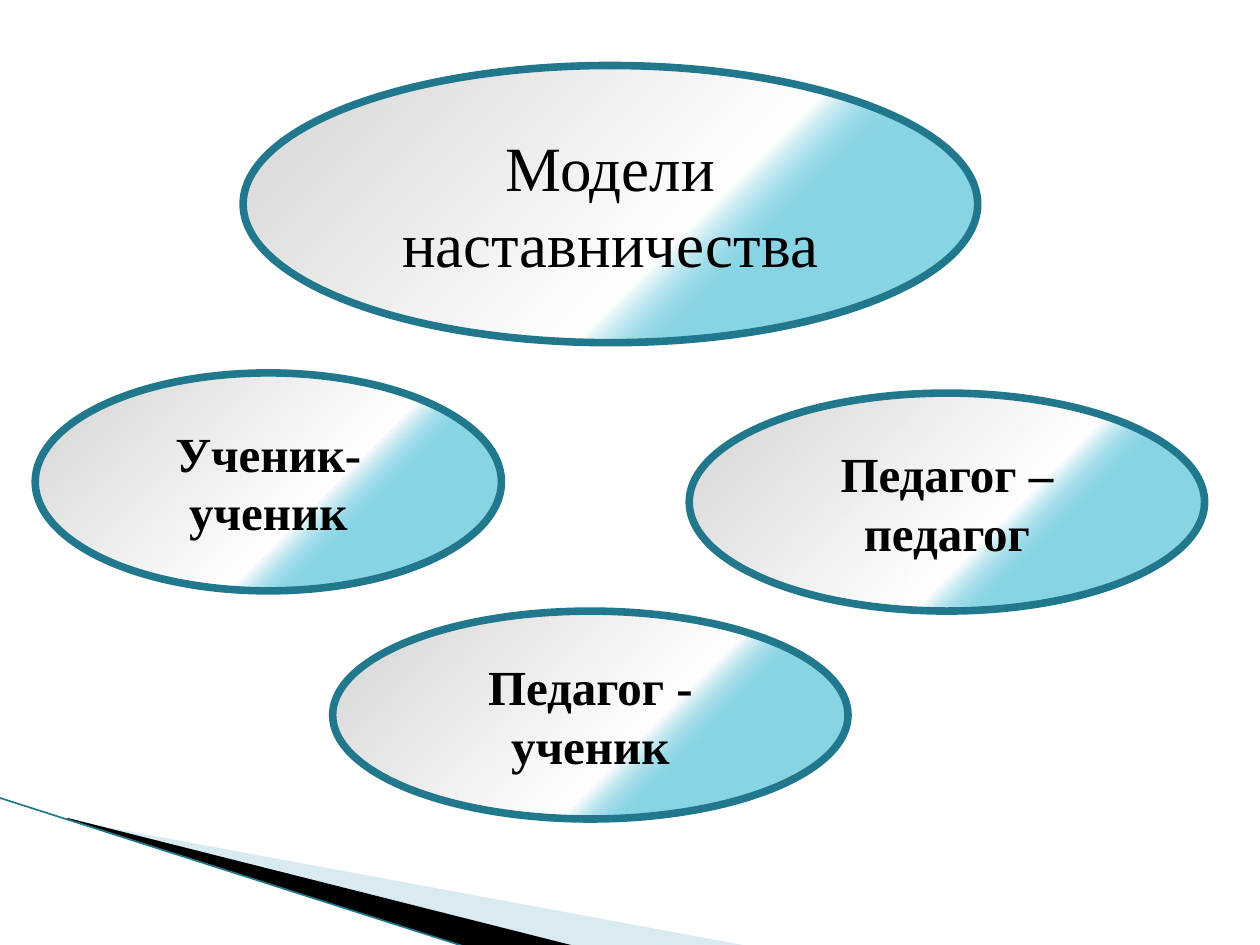
from pptx import Presentation
from pptx import util as u
from pptx.dml.color import RGBColor
from pptx.enum import shapes, text
from pptx.oxml import parse_xml
from pptx.oxml.ns import nsdecls, qn

COLORS = {
    "rim": "21788D",
    "aqua": "1FAECD",
    "white": "FFFFFF",
    "grey": "D3D3D3",
    "mist": "A0CBDC",
    "black": "000000",
}
GLOW = [(31, "aqua", 52), (40, "white", 100), (100, "grey", 100)]


class SlideBuilder:
    """Holds the style and the current slide, and draws each kind of element."""

    font = "Times New Roman"
    rim_width = u.Pt(4.33)

    def __init__(self, prs):
        self.s = prs.slides.add_slide(prs.slide_layouts[6])

    def rgb(self, name):
        return RGBColor.from_string(COLORS[name])

    def wedge(self, points, color, alpha=100):
        start, *rest = [(u.Inches(x), u.Inches(y)) for x, y in points]
        fb = self.s.shapes.build_freeform(*start)
        fb.add_line_segments(rest, close=True)
        sp = fb.convert_to_shape()
        sp.shadow.inherit = False
        sp.fill.solid()
        sp.fill.fore_color.rgb = self.rgb(color)
        sp.line.fill.background()
        if alpha < 100:
            clr = sp._element.spPr.find(qn("a:solidFill"))[0]
            clr.append(parse_xml(f'<a:alpha {nsdecls("a")} val="{alpha * 1000}"/>'))

    def line(self, start, end, color, width):
        ends = [u.Inches(v) for v in (*start, *end)]
        cn = self.s.shapes.add_connector(shapes.MSO_CONNECTOR.STRAIGHT, *ends)
        cn.line.color.rgb = self.rgb(color)
        cn.line.width = u.Pt(width)
        cn._element.spPr.append(parse_xml(f'<a:effectLst {nsdecls("a")}/>'))

    def glow(self, sp):
        stops = "".join(
            f'<a:gs pos="{pos * 1000}"><a:srgbClr val="{COLORS[color]}">'
            f'<a:alpha val="{alpha * 1000}"/></a:srgbClr></a:gs>'
            for pos, color, alpha in GLOW)
        grad = parse_xml(
            f'<a:gradFill {nsdecls("a")} rotWithShape="1"><a:gsLst>{stops}</a:gsLst>'
            '<a:path path="circle"><a:fillToRect l="100000" t="100000"/></a:path>'
            '</a:gradFill>')
        sp._element.spPr.find(qn("a:prstGeom")).addnext(grad)

    def oval(self, box, label, size, bold=False):
        sp = self.s.shapes.add_shape(
            shapes.MSO_SHAPE.OVAL, *[u.Inches(v) for v in box])
        sp.shadow.inherit = False
        self.glow(sp)
        sp.line.color.rgb = self.rgb("rim")
        sp.line.width = self.rim_width
        tf = sp.text_frame
        tf.word_wrap = True
        tf.vertical_anchor = text.MSO_ANCHOR.MIDDLE
        p = tf.paragraphs[0]
        p.alignment = text.PP_ALIGN.CENTER
        r = p.add_run()
        r.text = label
        r.font.name = self.font
        r.font.size = u.Pt(size)
        r.font.bold = bold
        r.font.color.rgb = self.rgb("black")


def main():
    prs = Presentation()
    prs.slide_width, prs.slide_height = u.Inches(10), u.Inches(7.5)
    b = SlideBuilder(prs)

    b.wedge([(0.55, 6.51), (5.95, 7.51), (4.56, 7.51), (0.55, 6.5)], "mist", 40)
    b.wedge([(0.53, 6.49), (4.57, 7.51), (3.72, 7.52), (0.54, 6.5)], "black")
    b.line((-0.01, 6.33), (3.71, 7.52), "rim", 0.95)

    b.oval((1.93, 0.52, 5.83, 2.2), "Модели наставничества", 36)
    for box, label in [
        ((0.28, 2.96, 3.7, 1.73), "Ученик-ученик"),
        ((5.47, 3.12, 4.09, 1.73), "Педагог – педагог"),
        ((2.64, 4.85, 4.09, 1.65), "Педагог - ученик"),
    ]:
        b.oval(box, label, 28, bold=True)

    prs.save("out.pptx")


if __name__ == "__main__":
    main()
